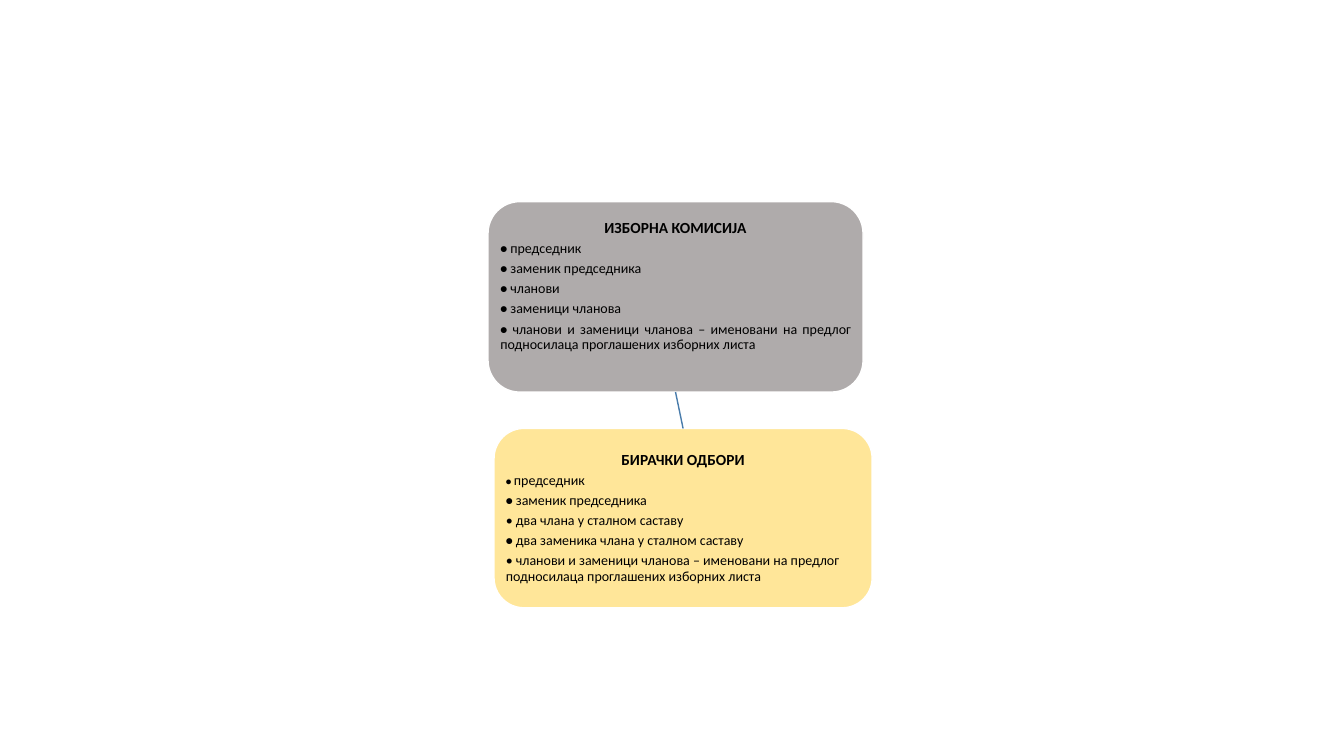
from pptx import Presentation
from pptx.dml.color import RGBColor
from pptx.enum.shapes import MSO_CONNECTOR, MSO_SHAPE
from pptx.enum.text import MSO_ANCHOR, PP_ALIGN
from pptx.oxml.ns import qn
from pptx.util import Inches, Pt
from lxml import etree

ROUND = MSO_SHAPE.ROUNDED_RECTANGLE
LINE = MSO_CONNECTOR.STRAIGHT
MIDDLE = MSO_ANCHOR.MIDDLE
CENTER, LEFT, JUSTIFY = PP_ALIGN.CENTER, PP_ALIGN.LEFT, PP_ALIGN.JUSTIFY
BOTTOM_SIDE, TOP_SIDE = 2, 0
INSET = 0.03


def color(code):
    return RGBColor.from_string(code)


class Chart:
    font = "Calibri"
    ink = "000000"
    edge = "FFFFFF"
    link = "497CAB"

    def __init__(self, slide):
        self.slide = slide

    def style(self, para, size, align):
        para.alignment = align
        para.line_spacing = 0.9
        para.space_after = Pt(3.5)
        para.font.name = self.font
        para.font.size = Pt(size)
        para.font.color.rgb = color(self.ink)

    def box(self, place, fill, title, items, align, foot=INSET):
        """Draw a titled box; each item is (text, bold dot, dot size)."""
        shape = self.slide.shapes.add_shape(ROUND, *map(Inches, place))
        shape.shadow.inherit = False
        shape.fill.solid()
        shape.fill.fore_color.rgb = color(fill)
        shape.line.color.rgb = color(self.edge)
        shape.line.width = Pt(1)
        frame = shape.text_frame
        frame.word_wrap = True
        frame.vertical_anchor = MIDDLE
        frame.margin_left = frame.margin_right = frame.margin_top = Inches(INSET)
        frame.margin_bottom = Inches(foot)
        head = frame.paragraphs[0]
        head.text = title
        self.style(head, 11, CENTER)
        head.font.bold = True
        for text, bold, size in items:
            para = frame.add_paragraph()
            self.style(para, 10, align)
            dot = para.add_run()
            dot.text = "• "
            dot.font.bold = bold
            if size != 10:
                dot.font.size = Pt(size)
            para.add_run().text = text
        return shape

    def join(self, upper, lower):
        line = self.slide.shapes.add_connector(LINE, 0, 0, 0, 0)
        line.begin_connect(upper, BOTTOM_SIDE)
        line.end_connect(lower, TOP_SIDE)
        line.line.color.rgb = color(self.link)
        line.line.width = Pt(1)
        props = line._element.find(qn("p:spPr"))
        etree.SubElement(props, qn("a:effectLst"))


def main():
    deck = Presentation()
    deck.slide_width, deck.slide_height = Inches(13.33), Inches(7.5)
    chart = Chart(deck.slides.add_slide(deck.slide_layouts[6]))
    named = "чланови и заменици чланова – именовани на предлог подносилаца проглашених изборних листа"
    board = chart.box(
        (4.84, 2, 3.72, 1.89), "AFABAB", "ИЗБОРНА КОМИСИЈА",
        [(text, True, 10) for text in (
            "председник", "заменик председника", "чланови",
            "заменици чланова", named)],
        JUSTIFY, foot=0.24)
    polls = chart.box(
        (4.9, 4.25, 3.75, 1.78), "FFE699", "БИРАЧКИ ОДБОРИ",
        [("председник", True, 8),
         ("заменик председника", True, 10),
         ("два члана у сталном саставу", False, 10),
         ("два заменика члана у сталном саставу", True, 10),
         (named, False, 10)],
        LEFT)
    chart.join(board, polls)
    deck.save("out.pptx")


if __name__ == "__main__":
    main()
